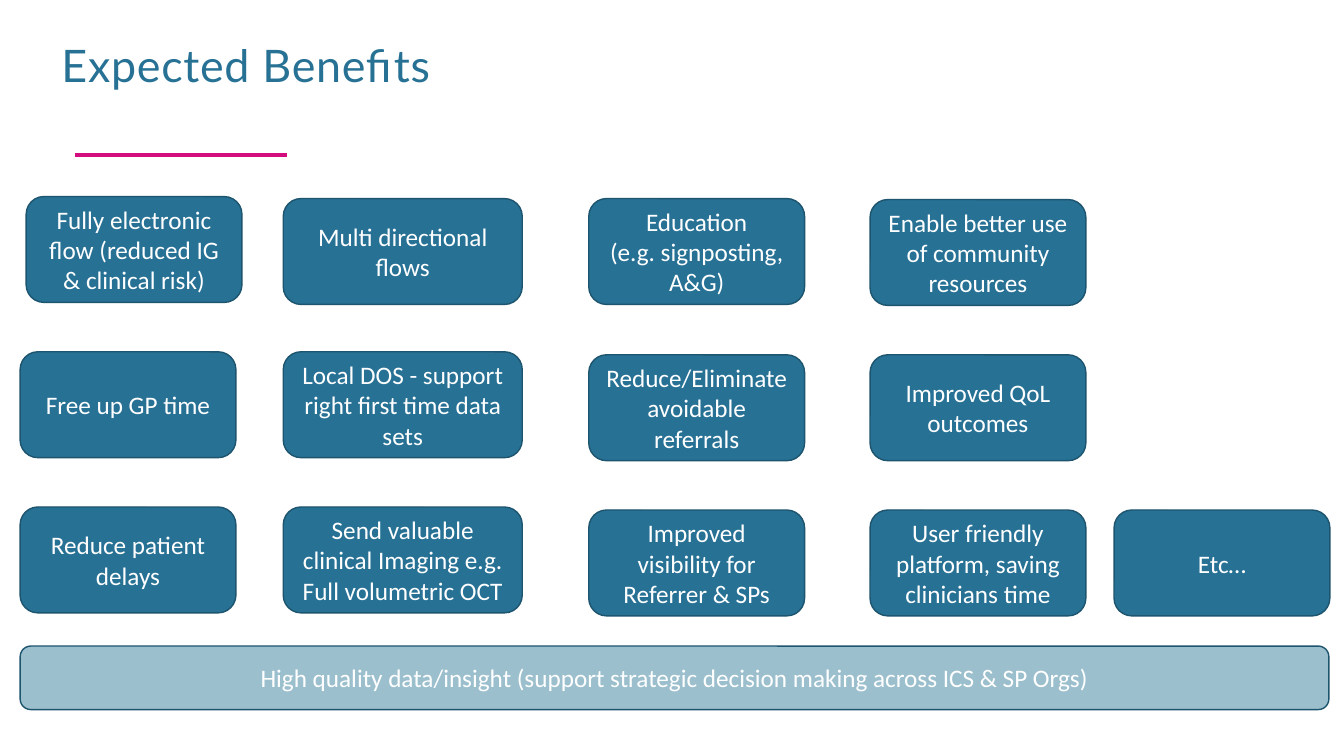
from pptx import Presentation, util as u
from pptx.dml.color import RGBColor
from pptx.enum import shapes, text
from pptx.oxml.ns import qn
from lxml import etree

TEAL = RGBColor(0x27, 0x71, 0x95)
EDGE = RGBColor(0x1D, 0x54, 0x6E)
PALE = RGBColor(0x9B, 0xBF, 0xCD)
PINK = RGBColor(0xD3, 0x0D, 0x7E)
WHITE = RGBColor(0xFF, 0xFF, 0xFF)

HIGH, STEP = 1.05, 1.54
# left, width, top of each column, shift (x, y) of its first box, texts
COLS = [
    (0.2, 2.14, 1.95, (0.06, 0), [
        "Fully electronic flow (reduced IG & clinical risk)",
        "Free up GP time",
        "Reduce patient delays"]),
    (2.81, 2.37, 1.95, (0, 0.02), [
        "Multi directional flows",
        "Local DOS - support right first time data sets",
        "Send valuable clinical Imaging e.g. Full volumetric OCT"]),
    (5.84, 2.14, 1.98, (0, -0.01), [
        "Education\n(e.g. signposting, A&G)",
        "Reduce/Eliminate avoidable referrals",
        "Improved visibility for Referrer & SPs"]),
    (8.63, 2.14, 1.98, (0, 0), [
        "Enable better use of community resources",
        "Improved QoL outcomes",
        "User friendly platform, saving clinicians time"]),
    (11.05, 2.14, 5.06, (0, 0), ["Etc…"]),
]


def assign(obj, vals):
    for key, val in vals.items():
        setattr(obj, key, val)


class Deck:
    title_font = {"name": "Lato", "size": u.Pt(32), "bold": False}
    box_font = {"name": "Calibri", "size": u.Pt(18)}

    def __init__(self):
        self.prs = Presentation()
        self.prs.slide_width = u.Inches(13.33)
        self.prs.slide_height = u.Inches(7.5)
        self.slide = self.prs.slides.add_slide(self.prs.slide_layouts[5])

    def title(self, words, left, top, width, height):
        shape = self.slide.shapes.title
        assign(shape, {"left": u.Inches(left), "top": u.Inches(top),
                       "width": u.Inches(width), "height": u.Inches(height)})
        frame = shape.text_frame
        frame.text = words
        assign(frame, {"word_wrap": True, "auto_size": text.MSO_AUTO_SIZE.NONE,
                       "vertical_anchor": text.MSO_ANCHOR.TOP})
        para = frame.paragraphs[0]
        assign(para, {"alignment": text.PP_ALIGN.LEFT, "line_spacing": 0.9,
                      "space_before": u.Pt(10)})
        font = para.runs[0].font
        assign(font, self.title_font)
        font.color.rgb = TEAL
        para.runs[0]._r.get_or_add_rPr().set("spc", "50")

    def rule(self, left, right, y):
        line = self.slide.shapes.add_connector(
            shapes.MSO_CONNECTOR.STRAIGHT, u.Inches(left), u.Inches(y),
            u.Inches(right), u.Inches(y))
        line.line.color.rgb = PINK
        line.line.width = u.Pt(3)
        etree.SubElement(line._element.spPr, qn("a:effectLst"))

    def box(self, words, left, top, width, height, fill=TEAL):
        shape = self.slide.shapes.add_shape(
            shapes.MSO_SHAPE.ROUNDED_RECTANGLE, u.Inches(left), u.Inches(top),
            u.Inches(width), u.Inches(height))
        shape.shadow.inherit = False
        shape.fill.solid()
        shape.fill.fore_color.rgb = fill
        shape.line.color.rgb = EDGE
        shape.line.width = u.Pt(1)
        frame = shape.text_frame
        frame.text = words
        assign(frame, {"word_wrap": True,
                       "vertical_anchor": text.MSO_ANCHOR.MIDDLE})
        for para in frame.paragraphs:
            para.alignment = text.PP_ALIGN.CENTER
            for run in para.runs:
                assign(run.font, self.box_font)
                run.font.color.rgb = WHITE


def main():
    deck = Deck()
    deck.rule(0.74, 2.85, 1.54)
    deck.title("Expected Benefits", 0.51, 0.38, 11.53, 0.63)
    for left, width, top, shift, texts in COLS:
        for row, words in enumerate(texts):
            dx, dy = (0, 0) if row else shift
            deck.box(words, left + dx, top + row * STEP + dy, width, HIGH)
    deck.box("High quality data/insight (support strategic decision making "
             "across ICS & SP Orgs)", 0.2, 6.41, 12.98, 0.63, PALE)
    deck.prs.save("out.pptx")


if __name__ == "__main__":
    main()
